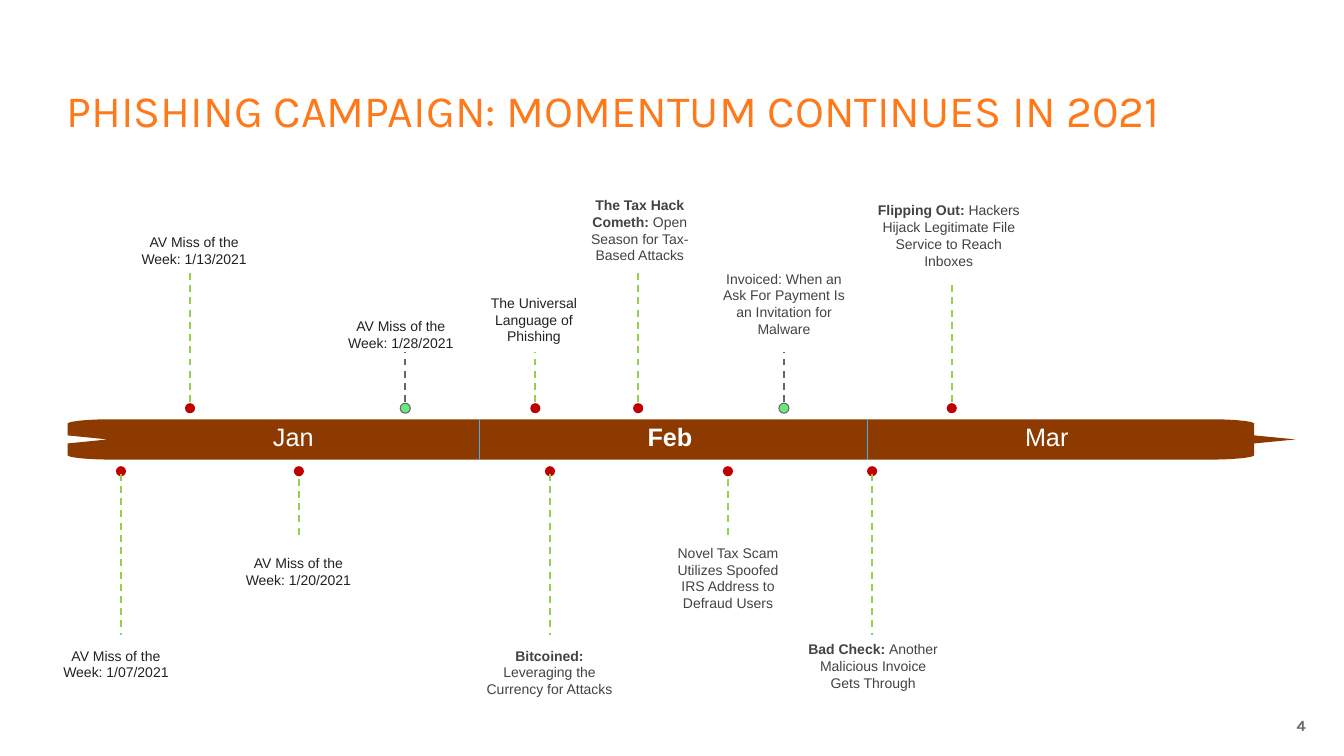
from dataclasses import dataclass
from math import cos, pi, sin

from lxml.etree import SubElement
from pptx import Presentation
from pptx.dml.color import RGBColor
from pptx.enum.dml import MSO_LINE
from pptx.enum.shapes import MSO_CONNECTOR, MSO_SHAPE
from pptx.enum.text import MSO_ANCHOR, PP_ALIGN
from pptx.oxml.ns import qn
from pptx.util import Inches, Pt

BROWN, RED, MINT = "8C3A00", "C00000", "69E781"
LIME, GREY, BLUE, WHITE = "92D050", "666666", "47AFE8", "FFFFFF"
INK, SLATE, ORANGE = "222222", "434343", "FF791A"
NO_GRID_STYLE = "{2D5ABB26-0587-4C30-8999-92F81FD0307C}"


@dataclass
class Event:
    """Grid offsets from the band's top left; a negative top lies above the band."""
    x: float
    stem: float
    left: float
    top: float
    width: float
    lines: int
    lead: str
    text: str
    colour: str = SLATE
    minor: bool = False


EVENTS = [
    Event(5.3, 16, -1.9, 22.1, 13.4, 2, "", "AV Miss of the Week: 1/07/2021", INK),
    Event(12.15, 13, 5.3, -18.9, 14.5, 2, "", "AV Miss of the Week: 1/13/2021", INK),
    Event(22.95, 6, 15.9, 12.9, 14, 2, "", "AV Miss of the Week: 1/20/2021", INK),
    Event(33.5, 5, 26.8, -10.6, 12.5, 2, "", "AV Miss of the Week: 1/28/2021", INK, True),
    Event(46.4, 5, 40, -12.9, 12.5, 3, "", "The Universal Language of Phishing", INK),
    Event(47.85, 16, 39.9, 22.1, 15.8, 3, "Bitcoined: ", "Leveraging the Currency for Attacks"),
    Event(56.6, 13, 49.3, -22.6, 14.9, 4, "The Tax Hack Cometh: ",
          "Open Season for Tax-Based Attacks"),
    Event(65.5, 6, 58.8, 11.9, 13.4, 4, "",
          "Novel Tax Scam Utilizes Spoofed IRS Address to Defraud Users"),
    Event(71.05, 5, 63.6, -15.3, 14.9, 4, "",
          "Invoiced: When an Ask For Payment Is an Invitation for Malware", minor=True),
    Event(79.8, 16, 72.1, 21.5, 15.6, 3, "Bad Check: ", "Another Malicious Invoice Gets Through"),
    Event(87.7, 12, 78.7, -22.1, 17.4, 4, "Flipping Out: ",
          "Hackers Hijack Legitimate File Service to Reach Inboxes"),
]


def grid(units):
    """One grid column or row is a tenth of an inch."""
    return Inches(units / 10)


def rgb(colour):
    return RGBColor.from_string(colour)


def style(run, size, colour, face="Arial", bold=False):
    run.font.size, run.font.name, run.font.bold = Pt(size), face, bold
    run.font.color.rgb = rgb(colour)


def add_line(slide, x1, y1, x2, y2, colour, width, dash=None):
    line = slide.shapes.add_connector(MSO_CONNECTOR.STRAIGHT, *map(grid, (x1, y1, x2, y2)))
    line.line.color.rgb = rgb(colour)
    line.line.width = Pt(width)
    if dash:
        line.line.dash_style = dash
    SubElement(line._element.spPr, qn("a:effectLst"))


def add_title(slide, box):
    title = slide.shapes.title
    title.left, title.top, title.width, title.height = map(grid, box)
    frame = title.text_frame
    frame.text = "PHISHING CAMPAIGN: MOMENTUM CONTINUES IN 2021"
    frame.vertical_anchor = MSO_ANCHOR.MIDDLE
    heading = frame.paragraphs[0]
    heading.alignment, heading.line_spacing = PP_ALIGN.LEFT, 0.9
    style(heading.runs[0], 32, ORANGE, "Karla")


def add_page_number(slide, box):
    frame = slide.shapes.add_textbox(*map(grid, box)).text_frame
    frame.word_wrap, frame.vertical_anchor = True, MSO_ANCHOR.MIDDLE
    frame.text = "4"
    frame.paragraphs[0].alignment = PP_ALIGN.RIGHT
    style(frame.paragraphs[0].runs[0], 11, GREY, "Karla", True)


def add_band(slide, box):
    """Rounded bar with a notch on the left and a spike on the right."""
    left, top, width, height = box
    spike, corner_w, corner_h, slit = 4.1, 4.4, 0.45, 0.4
    body, middle = width - spike, height / 2
    arc = [(corner_w * (1 - sin(a)), corner_h * (1 - cos(a)))
           for a in (pi / 2 * step / 12 for step in range(13))]
    upper_left = arc + [(0, middle - slit)]
    lower_left = [(x, height - y) for x, y in reversed(upper_left)]
    left_side = upper_left + [(4, middle)] + lower_left
    right_side = [(body - x, y) for x, y in reversed(left_side)]
    right_side[len(right_side) // 2] = (width, middle)
    points = [(grid(left + x), grid(top + y)) for x, y in left_side + right_side]
    builder = slide.shapes.build_freeform(*points[0])
    builder.add_line_segments(points[1:], close=True)
    band = builder.convert_to_shape()
    band.shadow.inherit = False
    band.fill.solid()
    band.fill.fore_color.rgb = rgb(BROWN)
    band.line.fill.background()


def add_months(slide, box):
    left, top, _, height = box
    frame = slide.shapes.add_table(1, 3, grid(left + 3.7), grid(top - 0.1), grid(112.1), grid(height))
    table = frame.table
    table.first_row = table.horz_banding = False
    table._tbl.tblPr.find(qn("a:tableStyleId")).text = NO_GRID_STYLE
    for cell, month in zip(table.rows[0].cells, ("Jan", "Feb", "Mar")):
        cell.fill.background()
        cell.text = month
        cell.text_frame.paragraphs[0].alignment = PP_ALIGN.CENTER
        style(cell.text_frame.paragraphs[0].runs[0], 18, WHITE, bold=month == "Feb")
    # Month separators
    for x in (40.85, 79.35):
        add_line(slide, left + x, top, left + x, top + height, BLUE, 0.5)


def add_event(slide, box, event):
    left, top, _, height = box
    x = left + event.x
    if event.top < 0:
        dot_y, stem_y = top - 1.1, top - 1.7
        tip_y = stem_y - event.stem
    else:
        dot_y = top + height + 1.15
        stem_y = top + height + (1.4 if event.stem > 10 else 1.9)
        tip_y = stem_y + event.stem

    # Dot and stem
    dot = slide.shapes.add_shape(MSO_SHAPE.OVAL, grid(x - 0.5), grid(dot_y - 0.5), grid(1), grid(1))
    dot.shadow.inherit = False
    dot.fill.solid()
    dot.fill.fore_color.rgb = rgb(MINT if event.minor else RED)
    if event.minor:
        dot.line.color.rgb = rgb(GREY)
        dot.line.width = Pt(0.75)
    else:
        dot.line.fill.background()
    add_line(slide, x, stem_y, x, tip_y, GREY if event.minor else LIME, 1.25, MSO_LINE.DASH)

    # Label
    label = slide.shapes.add_textbox(grid(left + event.left), grid(top + event.top),
                                     grid(event.width), grid(1 + 1.68 * event.lines))
    label.text_frame.word_wrap = True
    paragraph = label.text_frame.paragraphs[0]
    paragraph.alignment = PP_ALIGN.CENTER
    for part in filter(None, (event.lead, event.text)):
        run = paragraph.add_run()
        run.text = part
        style(run, 10, event.colour, bold=part == event.lead)


def add_timeline(slide, box):
    add_band(slide, box)
    add_months(slide, box)
    for event in EVENTS:
        add_event(slide, box, event)


def main():
    deck = Presentation()
    deck.slide_width, deck.slide_height = Inches(13.33), Inches(7.5)
    slide = deck.slides.add_slide(deck.slide_layouts[5])
    add_title(slide, (5.6, 4, 121.8, 14.5))
    add_timeline(slide, (6.7, 41.6, 121.8, 4))
    add_page_number(slide, (125.7, 70, 4.8, 4))
    deck.save("out.pptx")


if __name__ == "__main__":
    main()
